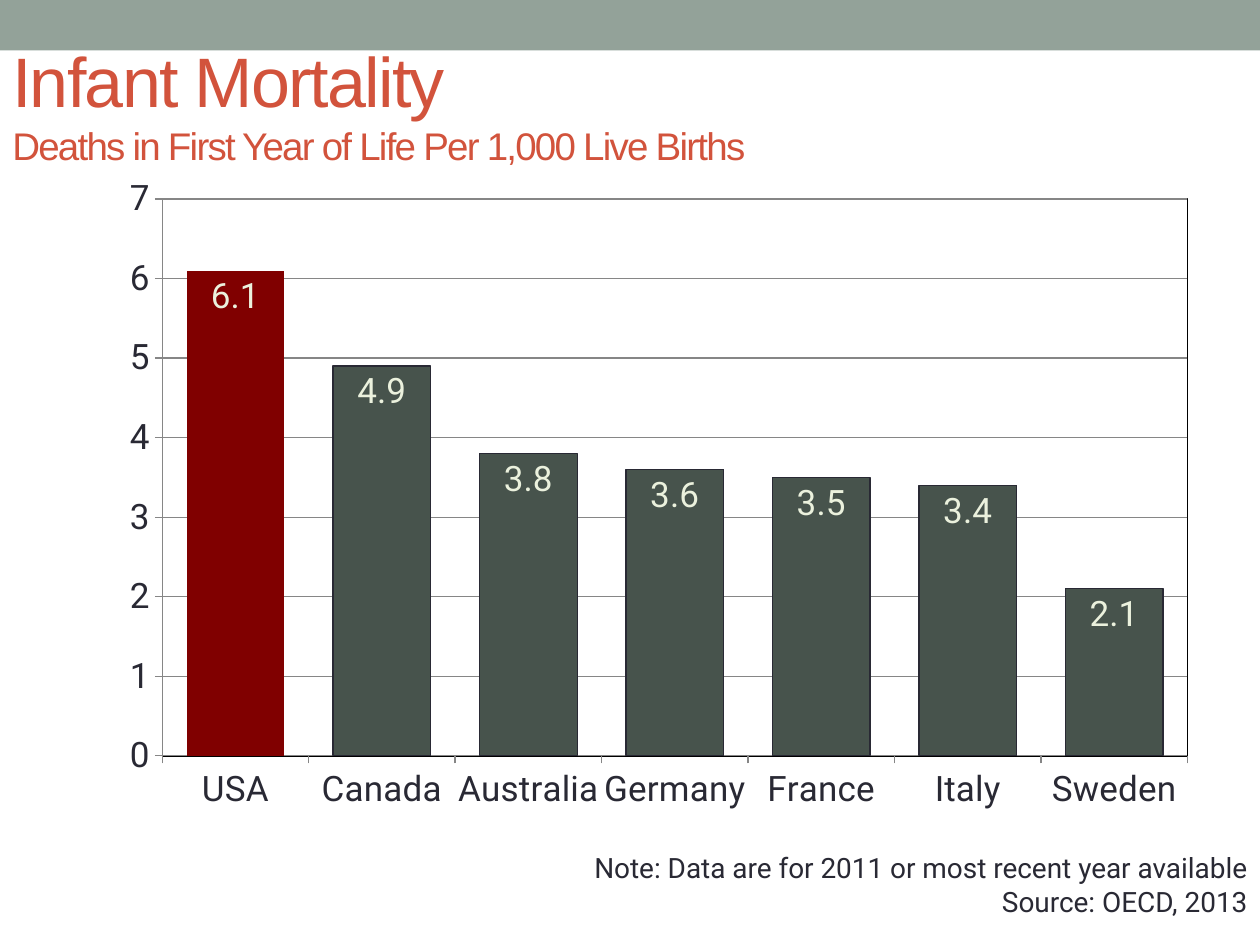
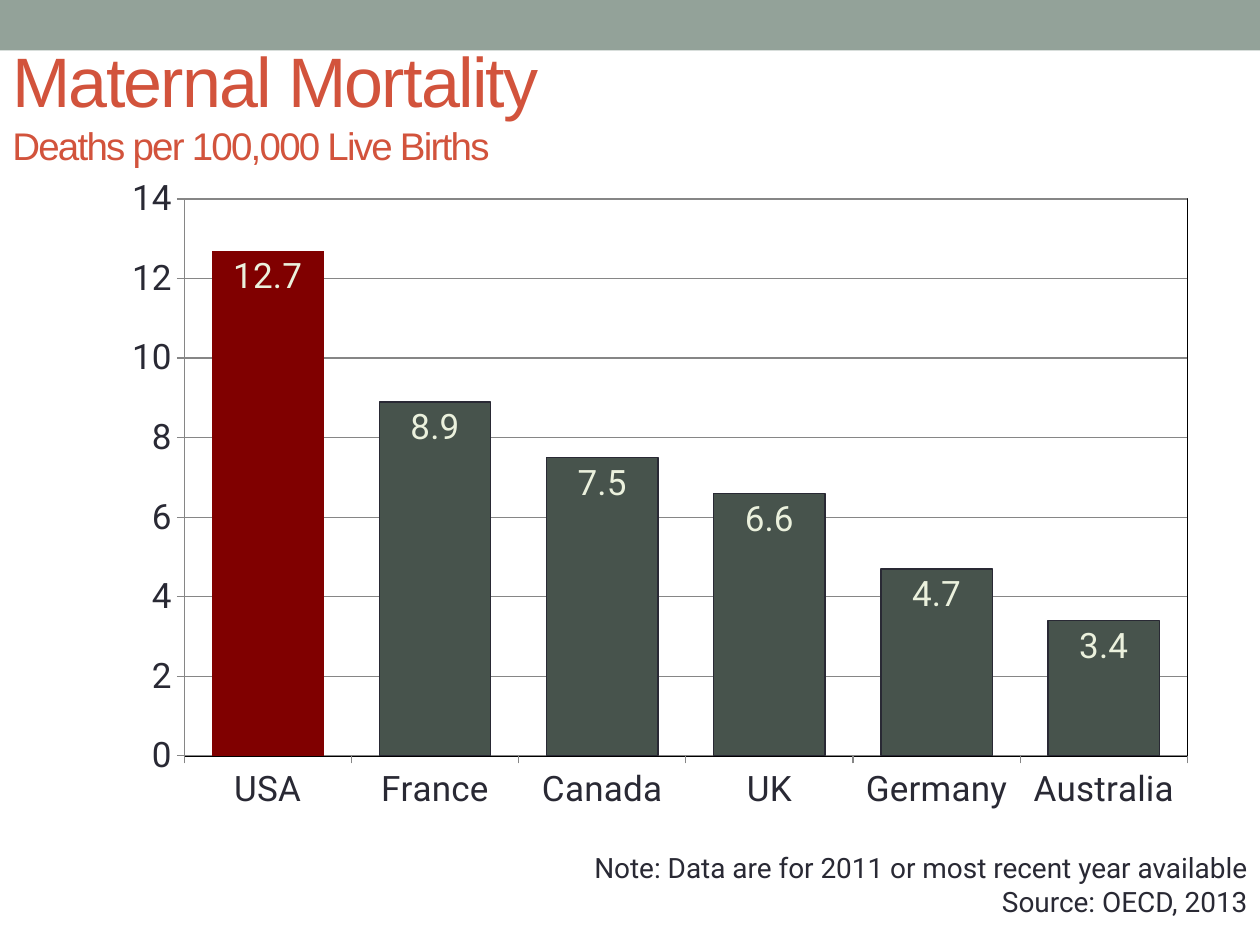
import pptx
import pptx.chart.data
import pptx.dml.color
import pptx.enum.chart
import pptx.enum.shapes
import pptx.enum.text
import pptx.oxml
import pptx.oxml.ns
import pptx.util

# Content
CHART_SLIDES = [
    {
        "title": "Infant Mortality",
        "subtitle": "Deaths in First Year of Life Per 1,000 Live Births",
        "rates": {"USA": 6.1, "Canada": 4.9, "Australia": 3.8, "Germany": 3.6,
                  "France": 3.5, "Italy": 3.4, "Sweden": 2.1},
        "axis": {"maximum_scale": 7, "major_unit": 1},
        "plot_left": 0.05,
    },
    {
        "title": "Maternal Mortality",
        "subtitle": "Deaths per 100,000 Live Births",
        "rates": {"USA": 12.7, "France": 8.9, "Canada": 7.5, "UK": 6.6,
                  "Germany": 4.7, "Australia": 3.4},
        "axis": {"maximum_scale": 14, "major_unit": 2},
        "plot_left": 0.07,
    },
]
NOTE_LINES = ["Note: Data are for 2011 or most recent year available", "Source: OECD, 2013"]

# Theme and layout
THEME = {
    "colors": {"band": "93A299", "title": "D2533C", "text": "292934", "bar": "47534C",
               "highlight": "800000", "label": "EBF1DD", "grid": "868686",
               "frame": "000000", "plot": "FFFFFF"},
    "sizes": {"title": 40, "subtitle": 22, "axis": 20, "note": 16, "chart": 18},
    "fonts": {"title": "Arial", "body": "Roboto"},
}
SLIDE_WIDTH, SLIDE_HEIGHT = 10, 7.5
BAND_BOX = (0, 0, SLIDE_WIDTH, 0.4)
TITLE_BOX = (0, 0.19, SLIDE_WIDTH, 1.25)
CHART_BOX = (0.85, 1.32, 8.75, 5.2)
NOTE_BOX = (3.7, 6.7, SLIDE_WIDTH - 3.7, 0.64)
PLOT_TOP, PLOT_RIGHT, PLOT_HEIGHT = 0.05, 0.98, 0.85


def inches(box):
    return [pptx.util.Inches(length) for length in box]


def color(name):
    return pptx.dml.color.RGBColor.from_string(THEME["colors"][name])


def apply(target, values):
    for name, value in values.items():
        setattr(target, name, value)


def style_font(font, size, color_name="text", family="body"):
    apply(font, {"size": pptx.util.Pt(THEME["sizes"][size]),
                 "name": THEME["fonts"][family]})
    font.color.rgb = color(color_name)


def style_line(line, color_name):
    line.color.rgb = color(color_name)
    line.width = pptx.util.Pt(0.75)


def add_text_frame(slide, box):
    frame = slide.shapes.add_textbox(*inches(box)).text_frame
    apply(frame, {"word_wrap": True,
                  "vertical_anchor": pptx.enum.text.MSO_ANCHOR.MIDDLE})
    return frame


def add_band(slide):
    band = slide.shapes.add_shape(pptx.enum.shapes.MSO_SHAPE.RECTANGLE, *inches(BAND_BOX))
    band.shadow.inherit = False
    band.fill.solid()
    band.fill.fore_color.rgb = color("band")
    band.line.fill.background()


def add_title(slide, content):
    paragraph = add_text_frame(slide, TITLE_BOX).paragraphs[0]
    for part in ("title", "subtitle"):
        if part == "subtitle":
            paragraph.add_line_break()
        run = paragraph.add_run()
        run.text = content[part]
        style_font(run.font, part, "title", "title")
        run.font._element.set("spc", "-100")


def add_note(slide):
    frame = add_text_frame(slide, NOTE_BOX)
    frame.text = "\n".join(NOTE_LINES)
    for paragraph in frame.paragraphs:
        paragraph.alignment = pptx.enum.text.PP_ALIGN.RIGHT
        style_font(paragraph.runs[0].font, "note")


def format_plot_area(chart, left):
    """Fix the inner plot rectangle, then give it a fill and a frame."""
    namespaces = pptx.oxml.ns.nsdecls("c", "a")
    plot_area = chart._chartSpace.chart.plotArea
    for old_layout in plot_area.findall(pptx.oxml.ns.qn("c:layout")):
        plot_area.remove(old_layout)
    places = {"x": left, "y": PLOT_TOP, "w": round(PLOT_RIGHT - left, 2), "h": PLOT_HEIGHT}
    modes = '<c:xMode val="edge"/><c:yMode val="edge"/>'
    sides = "".join(f'<c:{side} val="{share}"/>' for side, share in places.items())
    plot_area.insert(0, pptx.oxml.parse_xml(
        f'<c:layout {namespaces}><c:manualLayout><c:layoutTarget val="inner"/>'
        f"{modes}{sides}</c:manualLayout></c:layout>"))
    fill, frame = (f'<a:solidFill><a:srgbClr val="{THEME["colors"][name]}"/></a:solidFill>'
                   for name in ("plot", "frame"))
    plot_area.append(pptx.oxml.parse_xml(
        f'<c:spPr {namespaces}>{fill}<a:ln w="9525">{frame}</a:ln></c:spPr>'))


def add_rate_chart(slide, content):
    data = pptx.chart.data.CategoryChartData()
    data.categories = list(content["rates"])
    data.add_series("Series 1", list(content["rates"].values()))
    chart = slide.shapes.add_chart(
        pptx.enum.chart.XL_CHART_TYPE.COLUMN_CLUSTERED, *inches(CHART_BOX), data).chart
    apply(chart, {"has_legend": False, "has_title": False})
    style_font(chart.font, "chart", family="title")

    # Axes
    for axis in (chart.category_axis, chart.value_axis):
        axis.major_tick_mark = pptx.enum.chart.XL_TICK_MARK.OUTSIDE
        style_font(axis.tick_labels.font, "axis")
        style_line(axis.format.line, "grid")
    apply(chart.value_axis, {"minimum_scale": 0, "has_major_gridlines": True,
                             **content["axis"]})
    apply(chart.value_axis.tick_labels, {"number_format": "0",
                                         "number_format_is_linked": False})
    style_line(chart.value_axis.major_gridlines.format.line, "grid")

    # Bars, with the first country highlighted
    plot = chart.plots[0]
    apply(plot, {"gap_width": 50, "overlap": -5, "vary_by_categories": False})
    series = plot.series[0]
    series.invert_if_negative = False
    style_line(series.format.line, "text")
    for bars, name in ((series, "bar"), (series.points[0], "highlight")):
        bars.format.fill.solid()
        bars.format.fill.fore_color.rgb = color(name)

    # Value labels
    labels = series.data_labels
    apply(labels, {"show_value": True, "number_format": "#,##0.0",
                   "number_format_is_linked": False,
                   "position": pptx.enum.chart.XL_LABEL_POSITION.INSIDE_END})
    style_font(labels.font, "axis", "label")
    format_plot_area(chart, content["plot_left"])


def main():
    presentation = pptx.Presentation()
    apply(presentation, {"slide_width": pptx.util.Inches(SLIDE_WIDTH),
                         "slide_height": pptx.util.Inches(SLIDE_HEIGHT)})
    for content in CHART_SLIDES:
        slide = presentation.slides.add_slide(presentation.slide_layouts[6])
        add_band(slide)
        add_note(slide)
        add_title(slide, content)
        add_rate_chart(slide, content)
    presentation.save("out.pptx")


if __name__ == "__main__":
    main()
